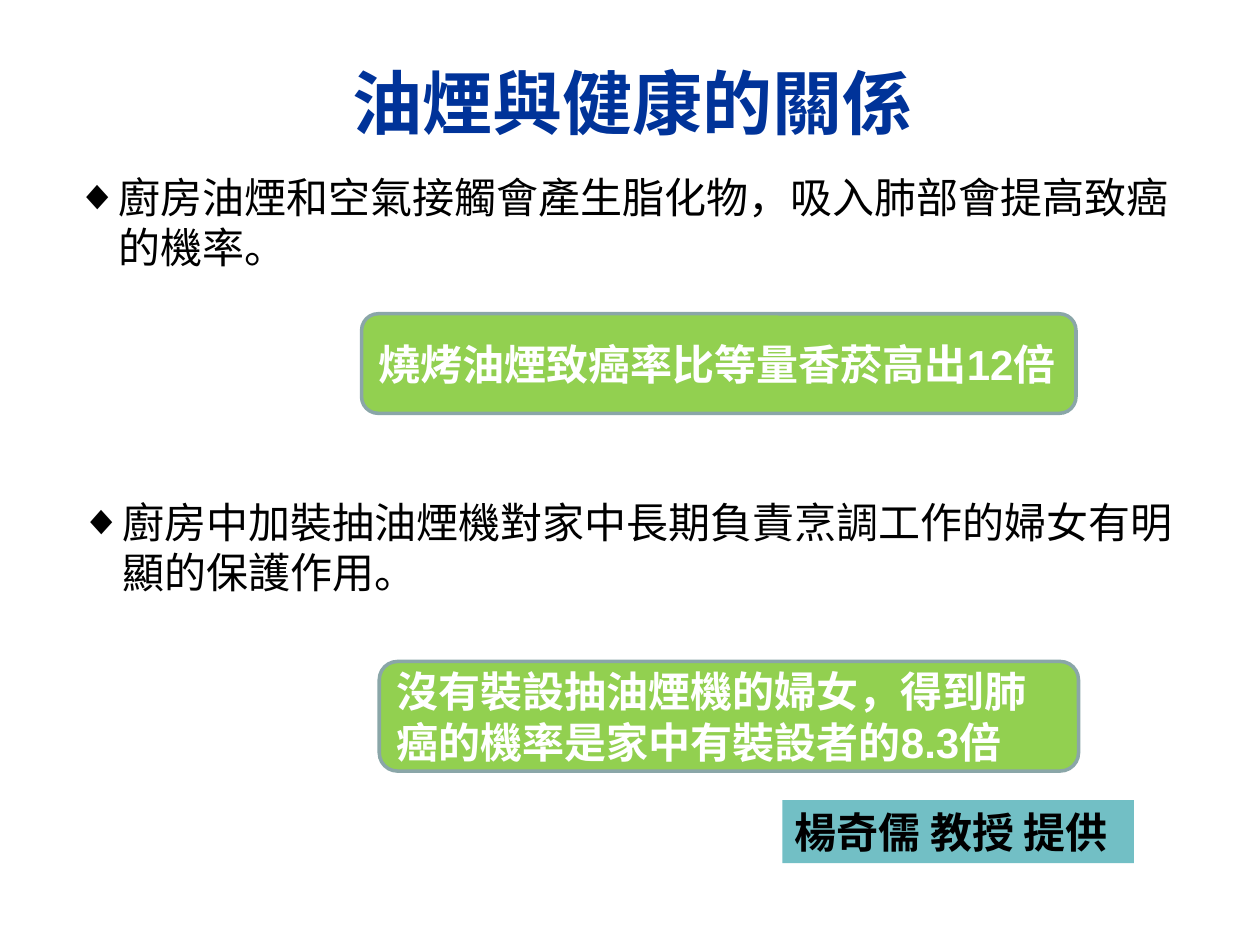
from pptx import Presentation
from pptx.dml.color import RGBColor
from pptx.enum.shapes import MSO_SHAPE as Preset
from pptx.enum.text import MSO_ANCHOR as Anchor, MSO_AUTO_SIZE as AutoSize, PP_ALIGN as Align
from pptx.oxml.ns import qn
from pptx.util import Inches, Pt
from lxml.etree import SubElement

TITLE_AND_TWO_LISTS = 3


def color(value):
    return RGBColor.from_string(value)


def place(shape, box):
    shape.left, shape.top, shape.width, shape.height = (Inches(length) for length in box)


def write_text(shape, text, size=24, font_color="000000", bold=False, align=Align.LEFT,
               anchor=Anchor.TOP, bullet=None, indent=0.33):
    frame = shape.text_frame
    frame.word_wrap = True
    frame.auto_size = AutoSize.NONE
    frame.vertical_anchor = anchor
    paragraph = frame.paragraphs[0]
    paragraph.text = text
    paragraph.alignment = align
    paragraph.space_before = Pt(0)
    if bullet:
        properties = paragraph._p.get_or_add_pPr()
        properties.set("marL", str(Inches(indent)))
        properties.set("indent", str(-Inches(indent)))
        SubElement(properties, qn("a:buFont"), typeface="Arial")
        SubElement(properties, qn("a:buChar"), char=bullet)
    font = paragraph.runs[0].font
    font.name = "Arial"
    font.size = Pt(size)
    font.bold = bold
    font.color.rgb = color(font_color)


def add_title(slide, box, text):
    title = slide.shapes.title
    place(title, box)
    write_text(title, text, size=40, font_color="003399", bold=True,
               align=Align.CENTER, anchor=Anchor.MIDDLE)


def add_point(slide, index, box, text):
    body = slide.placeholders[index]
    place(body, box)
    write_text(body, text, bullet="◆")


def add_panel(slide, box, text, preset, fill, line=None, font_color="FFFFFF"):
    panel = slide.shapes.add_shape(preset, *(Inches(length) for length in box))
    panel.shadow.inherit = False
    panel.fill.solid()
    panel.fill.fore_color.rgb = color(fill)
    if line:
        panel.line.color.rgb = color(line)
        panel.line.width = Pt(2)
    else:
        panel.line.fill.background()
    write_text(panel, text, font_color=font_color, bold=True, anchor=Anchor.MIDDLE)


def add_finding(slide, box, text):
    add_panel(slide, box, text, Preset.ROUNDED_RECTANGLE, "92D050", line="8AA6A8")


def add_credit(slide, box, text):
    add_panel(slide, box, text, Preset.RECTANGLE, "72BFC5", font_color="000000")


def main():
    presentation = Presentation()
    presentation.slide_width = Inches(10)
    presentation.slide_height = Inches(7.5)
    slide = presentation.slides.add_slide(presentation.slide_layouts[TITLE_AND_TWO_LISTS])
    add_title(slide, (2.58, 0.42, 4.88, 0.77), "油煙與健康的關係")
    add_point(slide, 1, (0.51, 1.31, 8.98, 0.91),
              "廚房油煙和空氣接觸會產生脂化物，吸入肺部會提高致癌的機率。")
    add_finding(slide, (2.87, 2.49, 5.67, 0.79), "燒烤油煙致癌率比等量香菸高出12倍")
    add_point(slide, 2, (0.54, 3.89, 8.98, 0.91),
              "廚房中加裝抽油煙機對家中長期負責烹調工作的婦女有明顯的保護作用。")
    add_finding(slide, (3.01, 5.25, 5.55, 0.87),
                "沒有裝設抽油煙機的婦女，得到肺癌的機率是家中有裝設者的8.3倍")
    add_credit(slide, (6.21, 6.35, 2.79, 0.5), "楊奇儒 教授 提供")
    presentation.save("out.pptx")


if __name__ == "__main__":
    main()
